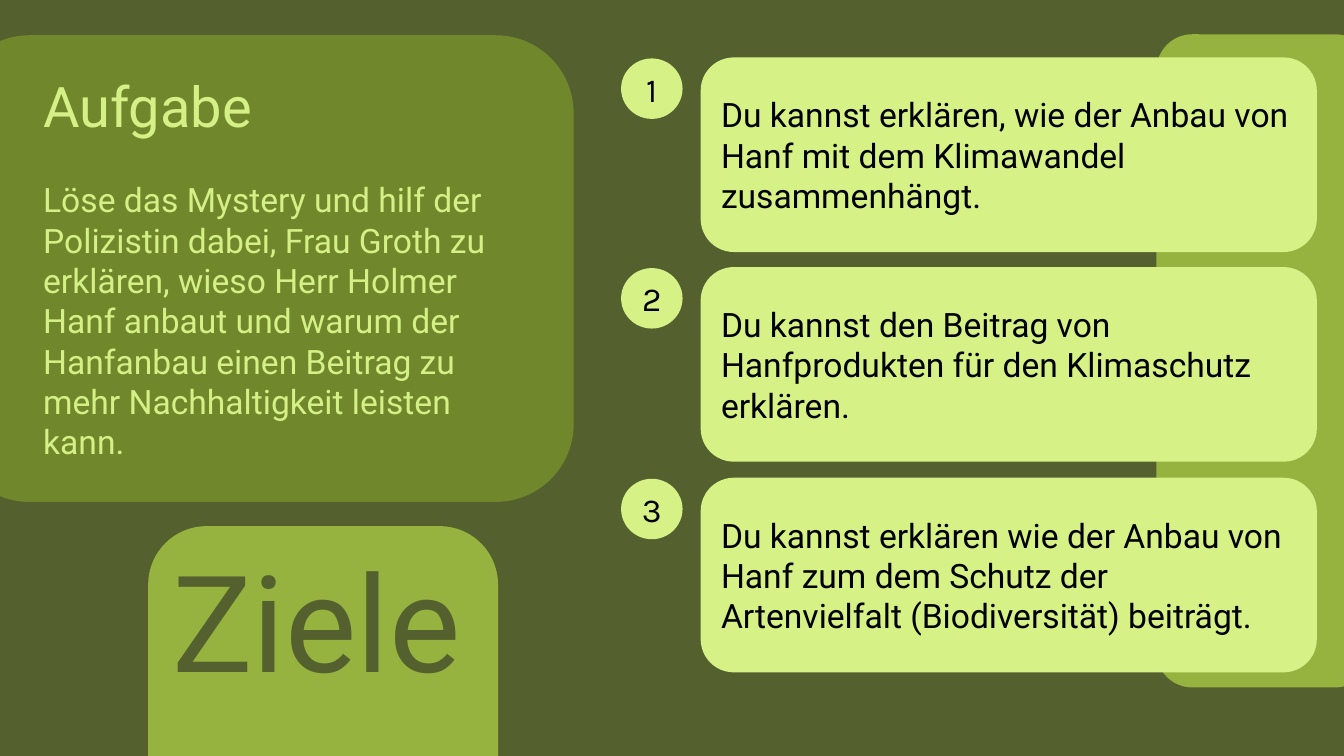
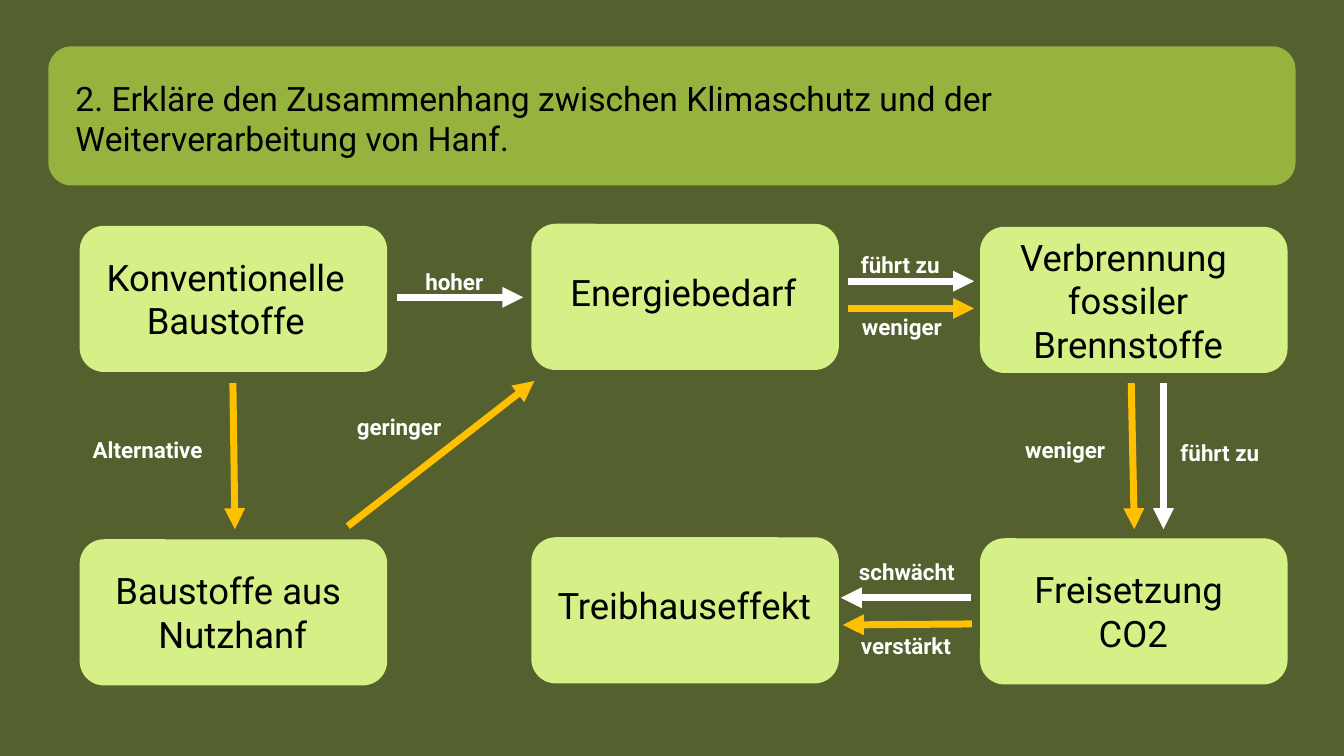
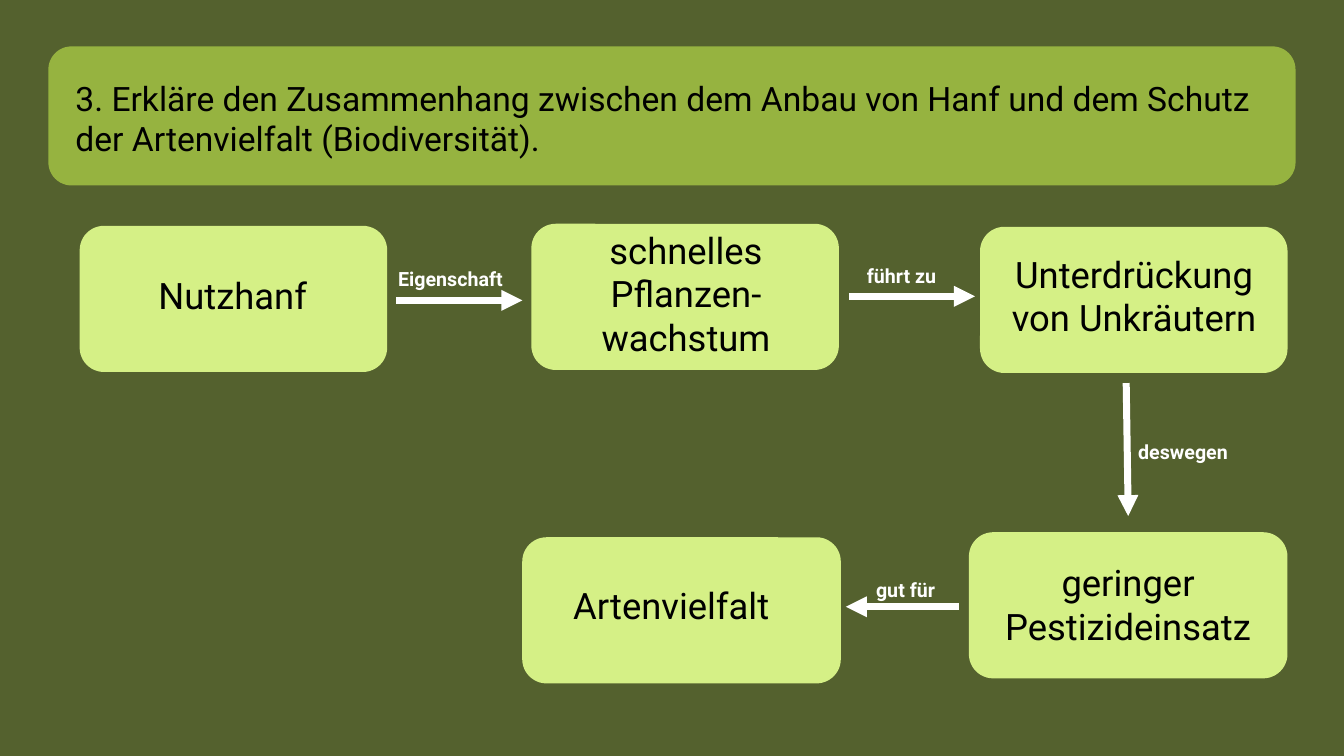
from pptx import Presentation
from pptx.dml.color import RGBColor
from pptx.enum.shapes import MSO_CONNECTOR, MSO_SHAPE
from pptx.enum.text import MSO_ANCHOR, PP_ALIGN
from pptx.oxml.ns import qn
from pptx.util import Emu, Pt
from lxml import etree

ROUND, OVAL = MSO_SHAPE.ROUNDED_RECTANGLE, MSO_SHAPE.OVAL
LINE = MSO_CONNECTOR.STRAIGHT
LEFT, MID = PP_ALIGN.LEFT, PP_ALIGN.CENTER
CENTER = MSO_ANCHOR.MIDDLE

DARK, MOSS, LEAF = "54612E", "70872B", "96B340"
PALE, CARD, DISC = "D5F086", "D6F186", "D6F286"
BLACK, WHITE, GOLD = "000000", "FFFFFF", "FFC000"
FONT, DIGIT = "Roboto", "Karla"
NODE = 145

GOALS = [
    "Du kannst erklären, wie der Anbau von Hanf mit dem Klimawandel zusammenhängt.",
    "Du kannst den Beitrag von Hanfprodukten für den Klimaschutz erklären.",
    "Du kannst erklären wie der Anbau von Hanf zum dem Schutz der "
    "Artenvielfalt (Biodiversität) beiträgt.",
]
TASK = ("Löse das Mystery und hilf der Polizistin dabei, Frau Groth zu erklären, "
        "wieso Herr Holmer Hanf anbaut und warum der Hanfanbau einen Beitrag zu "
        "mehr Nachhaltigkeit leisten kann.")

CLIMATE = {
    "head": "2. Erkläre den Zusammenhang zwischen Klimaschutz und der "
            "Weiterverarbeitung von Hanf.",
    "size": 16,
    "nodes": [
        ((79, 224, 305), (-13, 24, 316), "Konventionelle Baustoffe"),
        ((527, 222, 305), (3, 41, 296), "Energiebedarf"),
        ((972, 225, 305), (23, 3, 248), "Verbrennung \nfossiler\nBrennstoffe"),
        ((79, 535, 305), (-13, 24, 330), "Baustoffe aus \nNutzhanf"),
        ((527, 533, 305), (-6, 41, 316), "Treibhauseffekt"),
        ((972, 534, 305), (-23, 24, 350), "Freisetzung \nCO2"),
    ],
    "labels": [
        (412, 261, "hoher"), (844, 244, "führt zu"), (1161, 431, "führt zu"),
        (845, 306, "weniger"), (844, 622, "verstärkt"), (82, 428, "Alternative"),
        (344, 405, "geringer"), (1007, 428, "weniger"), (842, 549, "schwächt"),
    ],
    "arrows": [
        (394, 295, 519, 295, WHITE), (841, 279, 966, 279, WHITE),
        (841, 306, 966, 306, GOLD), (1154, 380, 1154, 525, WHITE),
        (1122, 380, 1125, 525, GOLD), (963, 593, 834, 593, WHITE),
        (964, 619, 836, 620, GOLD), (231, 380, 233, 525, GOLD),
        (345, 522, 530, 378, GOLD),
    ],
}
SPECIES = {
    "head": "3. Erkläre den Zusammenhang zwischen dem Anbau von Hanf und dem "
            "Schutz der Artenvielfalt (Biodiversität).",
    "size": 14,
    "nodes": [
        ((79, 224, 305), (-6, 42, 316), "Nutzhanf"),
        ((527, 222, 305), (41, -1, 225), "schnelles Pflanzen-wachstum"),
        ((972, 225, 305), (-5, 20, 316), "Unterdrückung von Unkräutern"),
        ((518, 533, 316), (-10, 41, 316), "Artenvielfalt"),
        ((961, 528, 316), (0, 23, 316), "geringer Pestizideinsatz"),
    ],
    "labels": [
        (385, 260, "Eigenschaft"), (850, 257, "führt zu"),
        (1119, 432, "deswegen"), (859, 568, "gut für"),
    ],
    "arrows": [
        (393, 298, 518, 298, WHITE), (842, 294, 967, 294, WHITE),
        (1117, 380, 1119, 512, WHITE), (951, 602, 839, 602, WHITE),
    ],
}


def px(*nums):
    """Turn px lengths into EMU."""
    return [Emu(num * 9144) for num in nums]


def tint(code):
    """Turn a hex string into a colour."""
    return RGBColor.from_string(code)


def write(para, text, size, color, font=FONT, bold=False, align=LEFT):
    """Add one styled run to a paragraph."""
    para.alignment = align
    run = para.add_run()
    run.text = text
    run.font.size = Pt(size)
    run.font.name = font
    run.font.bold = bold
    run.font.color.rgb = tint(color)


def panel(slide, box, color, kind=ROUND):
    """Draw a plain filled shape."""
    shape = slide.shapes.add_shape(kind, *px(*box))
    shape.shadow.inherit = False
    shape.fill.solid()
    shape.fill.fore_color.rgb = tint(color)
    shape.line.fill.background()
    shape.text_frame.vertical_anchor = CENTER
    return shape


def label(slide, box, text, size, color, **style):
    """Place a wrapping text box with one paragraph per text line."""
    frame = slide.shapes.add_textbox(*px(*box)).text_frame
    frame.word_wrap = True
    for num, part in enumerate(text.split("\n")):
        para = frame.add_paragraph() if num else frame.paragraphs[0]
        write(para, part, size, color, **style)
    return frame


def arrow(slide, ends, color):
    """Draw a thick line with a triangle at its end."""
    link = slide.shapes.add_connector(LINE, *px(*ends))
    link.line.width = Pt(5)
    link.line.color.rgb = tint(color)
    props = link._element.spPr
    etree.SubElement(props.find(qn("a:ln")), qn("a:tailEnd"), type="triangle")
    etree.SubElement(props, qn("a:effectLst"))


def task(slide, x, y):
    """Build the panel with the task."""
    panel(slide, (x, y, 617, 463), MOSS)
    frame = label(slide, (x + 81, y + 31, 508, 420), "Aufgabe", 40, PALE)
    para = frame.add_paragraph()
    para.space_before = Pt(29)
    write(para, TASK, 24, PALE)


def goal(slide, x, y, num, text):
    """Build a numbered goal card."""
    card = panel(slide, (x + 80, y, 609, 191), CARD)
    card.line.color.rgb = tint(CARD)
    card.line.width = Pt(1.5)
    para = card.text_frame.paragraphs[0]
    para.space_after = Pt(8)
    write(para, text, 24, BLACK)
    disc = panel(slide, (x, y, 61, 60), DISC, OVAL)
    write(disc.text_frame.paragraphs[0], str(num), 24, BLACK, DIGIT, align=MID)


def node(slide, box, inner, text):
    """Build a diagram box with its caption."""
    x, y, wide = box
    dx, dy, span = inner
    panel(slide, (x, y, wide, NODE), PALE)
    label(slide, (x + dx, y + dy, span, NODE - 2 * dy), text, 26, BLACK, align=MID)


def header(slide, x, y, text):
    """Build the band with the question."""
    panel(slide, (x, y, 1237, 138), LEAF)
    label(slide, (x + 17, y + 26, 1191, 91), text, 24, BLACK)


def goals(slide):
    """Build the slide with task and goals."""
    panel(slide, (1147, 34, 213, 648), LEAF)
    panel(slide, (147, 522, 347, 397), LEAF)
    task(slide, -48, 35)
    label(slide, (161, 529, 350, 170), "Ziele", 96, DARK)
    for num, text in enumerate(GOALS):
        goal(slide, 616, 58 + num * 417 // 2, num + 1, text)


def diagram(slide, plan):
    """Build a slide with a question and a cause diagram."""
    header(slide, 48, 46, plan["head"])
    for part in plan["nodes"]:
        node(slide, *part)
    for x, y, text in plan["labels"]:
        label(slide, (x, y, 145, 37), text, plan["size"], WHITE, bold=True)
    for *ends, color in plan["arrows"]:
        arrow(slide, ends, color)


def main():
    """Build and save the deck."""
    deck = Presentation()
    deck.slide_width, deck.slide_height = px(1333, 750)

    def page():
        """Add a blank slide with the dark ground."""
        slide = deck.slides.add_slide(deck.slide_layouts[6])
        slide.background.fill.solid()
        slide.background.fill.fore_color.rgb = tint(DARK)
        return slide

    goals(page())
    for plan in (CLIMATE, SPECIES):
        diagram(page(), plan)
    deck.save("out.pptx")


if __name__ == "__main__":
    main()
